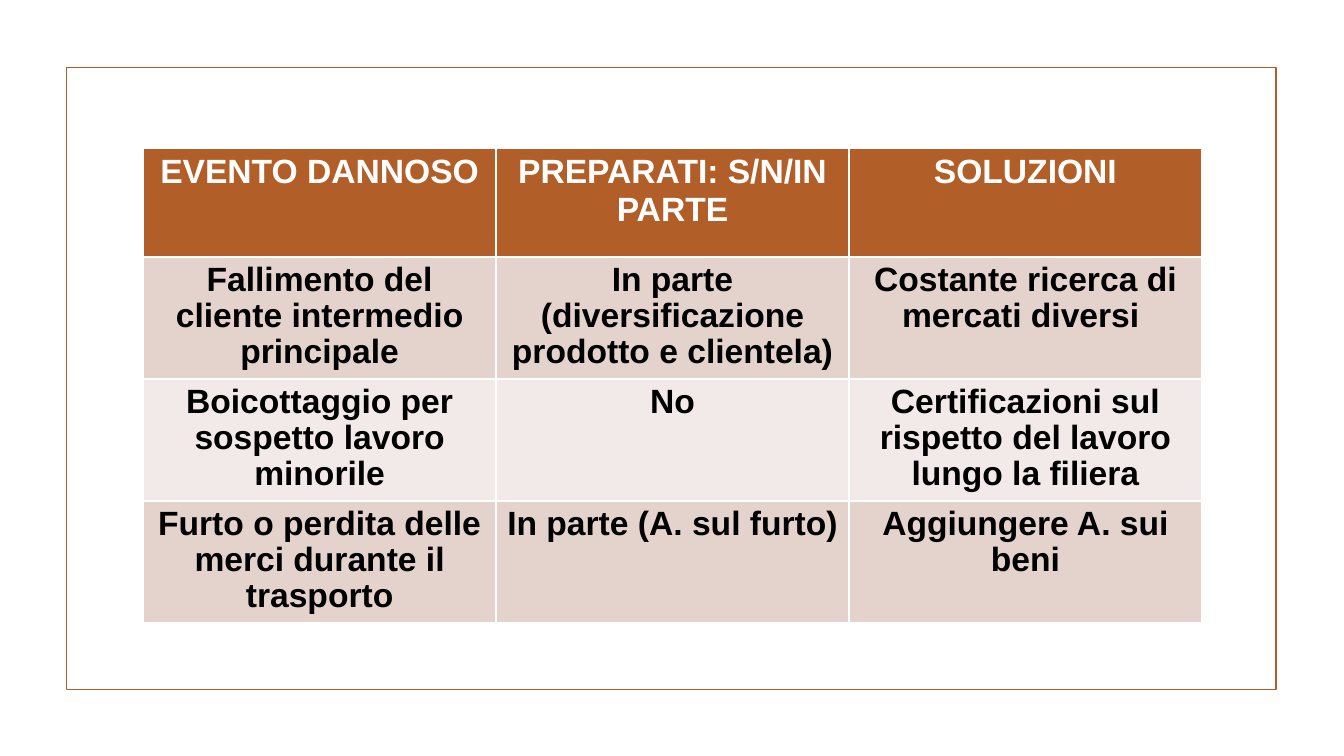
from pptx import Presentation
from pptx.dml.color import RGBColor
from pptx.enum.shapes import MSO_SHAPE as Shape
from pptx.enum.text import PP_ALIGN as Align
from pptx.util import Inches, Pt

RUST = RGBColor(0xB1, 0x5E, 0x28)
ROSE = RGBColor(0xE4, 0xD2, 0xCD)
PALE_ROSE = RGBColor(0xF2, 0xEA, 0xE8)
WHITE = RGBColor(0xFF, 0xFF, 0xFF)
BLACK = RGBColor(0x00, 0x00, 0x00)

RISKS = [
    ("EVENTO DANNOSO", "PREPARATI: S/N/IN PARTE", "SOLUZIONI"),
    ("Fallimento del cliente intermedio principale",
     "In parte (diversificazione prodotto e clientela)",
     "Costante ricerca di mercati diversi "),
    ("Boicottaggio per sospetto lavoro minorile",
     "No",
     "Certificazioni sul rispetto del lavoro lungo la filiera"),
    ("Furto o perdita delle merci durante il trasporto",
     "In parte (A. sul furto)",
     "Aggiungere A. sui beni"),
]


def write(frame, text, color=BLACK, size=24, bold=True, spacing=0.97):
    paragraph = frame.paragraphs[0]
    paragraph.alignment = Align.CENTER
    paragraph.line_spacing = spacing
    run = paragraph.add_run()
    run.text = text
    run.font.name = "Arial"
    run.font.size = Pt(size)
    run.font.bold = bold
    run.font.color.rgb = color


prs = Presentation()
prs.slide_width = Inches(13.33)
prs.slide_height = Inches(7.5)
slide = prs.slides.add_slide(prs.slide_layouts[6])

# Frame around the page
border = slide.shapes.add_shape(
    Shape.RECTANGLE, Inches(0.66), Inches(0.67), Inches(12), Inches(6.17))
border.shadow.inherit = False
border.fill.background()
border.line.color.rgb = RUST
border.line.width = Pt(1.25)

# Risk table; its default style draws the white cell borders
risk_table = slide.shapes.add_table(
    len(RISKS), 3, Inches(1.42), Inches(1.47), Inches(10.5), Inches(4.71)).table

for r, texts in enumerate(RISKS):
    header = r == 0
    risk_table.rows[r].height = Inches(1.08 if header else 1.21)
    band = RUST if header else (ROSE if r % 2 else PALE_ROSE)
    for c, text in enumerate(texts):
        cell = risk_table.cell(r, c)
        cell.fill.solid()
        cell.fill.fore_color.rgb = band
        write(cell.text_frame, text, color=WHITE if header else BLACK,
              spacing=1.0 if header else 0.97)

prs.save("out.pptx")
